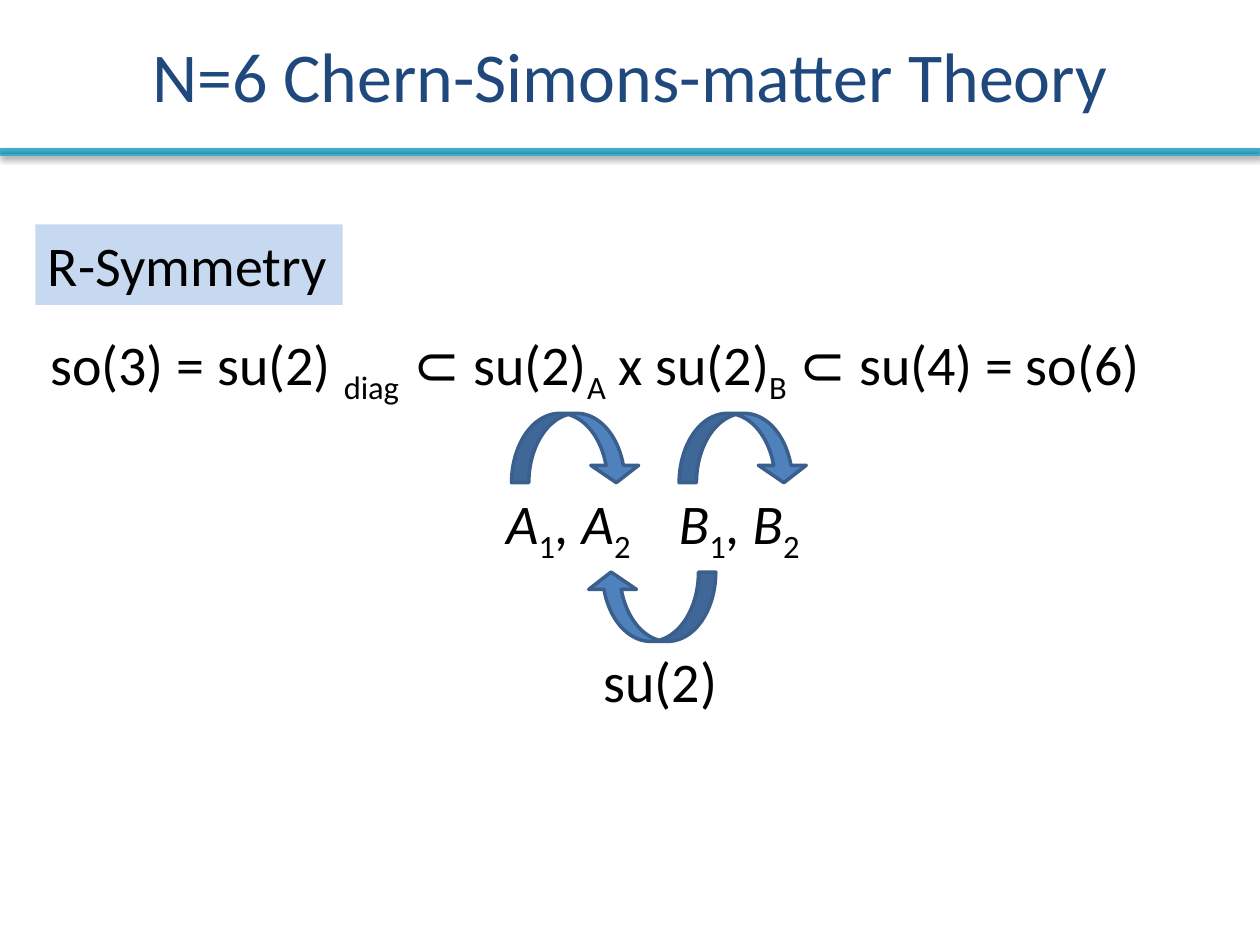
from dataclasses import dataclass

from lxml.etree import SubElement
from pptx import Presentation
from pptx.dml.color import RGBColor
from pptx.enum.shapes import MSO_SHAPE
from pptx.enum.text import MSO_ANCHOR, MSO_AUTO_SIZE, PP_ALIGN
from pptx.oxml.ns import qn
from pptx.util import Pt


@dataclass(frozen=True)
class Theme:
    """Colours, font and type sizes of the slide."""

    font: str = "Calibri"
    title_size: float = 40
    body_size: float = 32
    title: str = "1F497D"
    text: str = "000000"
    label: str = "C6D9F1"
    arrow: str = "4F81BD"
    arrow_line: str = "3A5F8C"
    bar_dark: str = "2A88A2"
    bar_light: str = "37B1D2"
    bar_line: str = "46AAC5"


THEME = Theme()


def colour(code):
    """Turn a hex code into a colour."""
    return RGBColor.from_string(code)


def points(*lengths):
    """Turn numbers into lengths in points."""
    return [Pt(length) for length in lengths]


def add_span(para, text, style="", size=THEME.body_size, ink=THEME.text):
    """Add a run that is plain, italic or subscript."""
    span = para.add_run()
    span.text = text
    span.font.name = THEME.font
    span.font.size = Pt(size)
    span.font.color.rgb = colour(ink)
    if style == "italic":
        span.font.italic = True
    elif style == "sub":
        span.font._element.set("baseline", "-25000")


def set_title(page, text):
    """Fill and place the title placeholder."""
    title = page.shapes.title
    title.left, title.top, title.width, title.height = points(0, 0, 720, 85)
    frame = title.text_frame
    frame.vertical_anchor = MSO_ANCHOR.MIDDLE
    para = frame.paragraphs[0]
    para.alignment = PP_ALIGN.CENTER
    add_span(para, text, size=THEME.title_size, ink=THEME.title)


def add_formula(page, left, top, width, spans, fill=None):
    """Add a one-line text box of styled spans."""
    box = page.shapes.add_textbox(*points(left, top, width, 46))
    if fill:
        box.fill.solid()
        box.fill.fore_color.rgb = colour(fill)
    frame = box.text_frame
    frame.word_wrap = False
    frame.auto_size = MSO_AUTO_SIZE.SHAPE_TO_FIT_TEXT
    for span in spans:
        add_span(frame.paragraphs[0], *span)


def add_arrow(page, left, top, rotation=0):
    """Add a curved arrow linking two fields."""
    arrow = page.shapes.add_shape(
        MSO_SHAPE.CURVED_DOWN_ARROW, *points(left, top, 73.5, 39.6))
    for index, value in enumerate((0.25, 0.69, 0.25)):
        arrow.adjustments[index] = value
    arrow.rotation = rotation
    arrow.shadow.inherit = False
    arrow.fill.solid()
    arrow.fill.fore_color.rgb = colour(THEME.arrow)
    arrow.line.color.rgb = colour(THEME.arrow_line)
    arrow.line.width = Pt(2)


def add_shadow(shape):
    """Give a shape a soft shadow below it."""
    shape.shadow.inherit = False
    effects = shape._element.spPr.find(qn("a:effectLst"))
    shadow = SubElement(
        effects, qn("a:outerShdw"), blurRad=str(Pt(3.1)), dist=str(Pt(1.8)),
        dir="5400000", rotWithShape="0")
    ink = SubElement(shadow, qn("a:srgbClr"), val="000000")
    SubElement(ink, qn("a:alpha"), val="35000")


def add_bar(page):
    """Add the gradient rule under the title."""
    bar = page.shapes.add_shape(MSO_SHAPE.RECTANGLE, *points(0, 85, 720, 3.6))
    bar.fill.gradient()
    bar.fill.gradient_angle = 90
    stops = ((0, THEME.bar_dark), (0.8, THEME.bar_light))
    for stop, (position, code) in zip(bar.fill.gradient_stops, stops):
        stop.position = position
        stop.color.rgb = colour(code)
    bar.line.color.rgb = colour(THEME.bar_line)
    bar.line.width = Pt(0.75)
    add_shadow(bar)


def field_pair(letter):
    """Give the spans of a pair of numbered fields."""
    return [(letter, "italic"), ("1", "sub"), (", ",),
            (letter, "italic"), ("2", "sub")]


def main():
    """Build and save the slide."""
    deck = Presentation()
    deck.slide_width, deck.slide_height = points(720, 540)
    page = deck.slides.add_slide(deck.slide_layouts[5])
    add_bar(page)
    set_title(page, "N=6 Chern-Simons-matter Theory")
    add_formula(page, 20.2, 128.2, 175.7, [("R-Symmetry",)], THEME.label)
    add_formula(page, 21.6, 185, 676, [
        ("so(3) = su(2) ",), ("diag  ", "sub"), ("⊂ su(2)",), ("A", "sub"),
        (" x su(2)",), ("B", "sub"), (" ⊂ su(4) = so(6)",)])
    for letter, arrow_left, left, width in (
            ("A", 292.3, 282.2, 89.3), ("B", 388.1, 380.9, 87.1)):
        add_arrow(page, arrow_left, 236.2)
        add_formula(page, left, 275.8, width, field_pair(letter))
    add_arrow(page, 335.5, 326.9, rotation=180)
    add_formula(page, 337.7, 365.8, 80.6, [("su(2)",)])
    deck.save("out.pptx")


if __name__ == "__main__":
    main()
